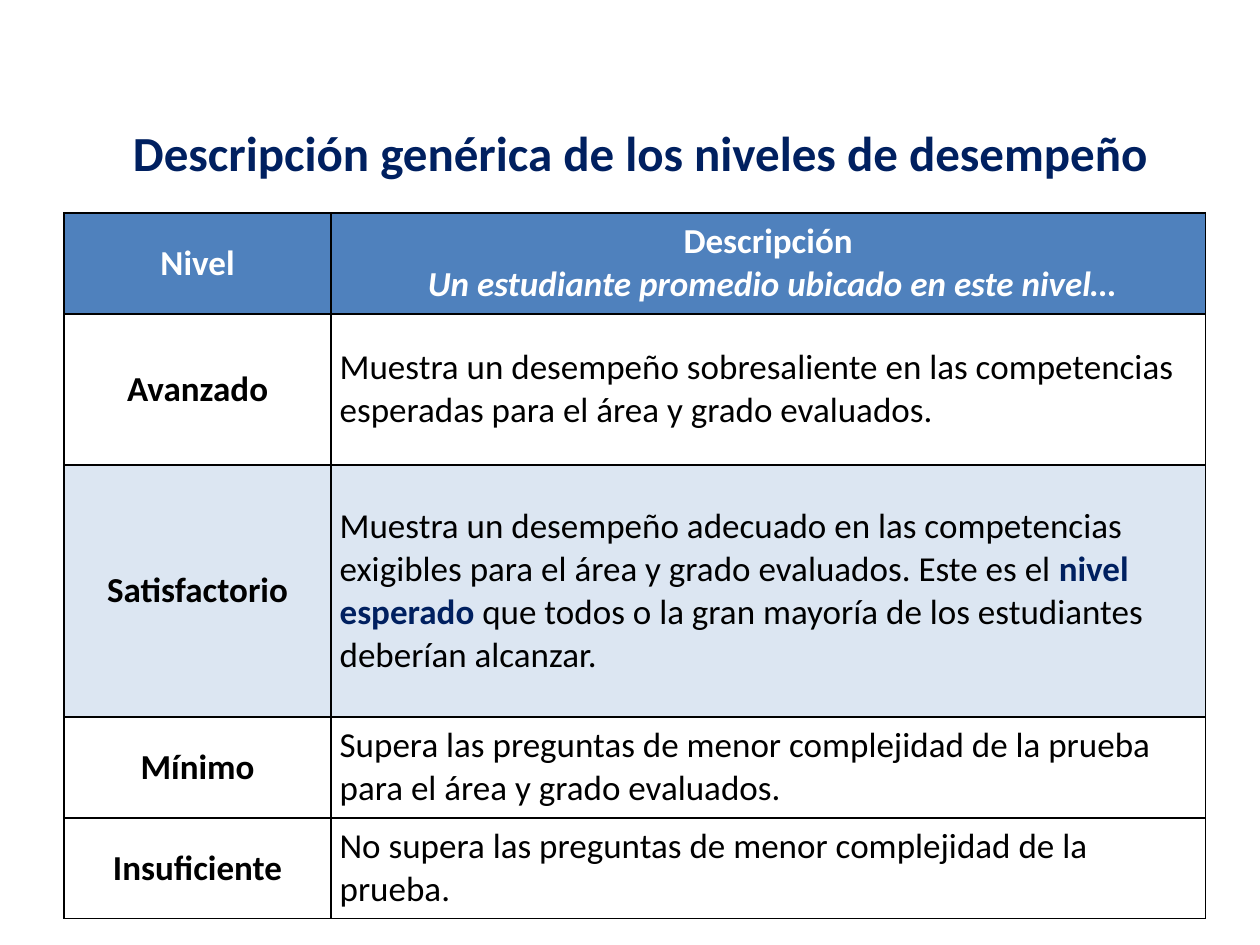
from dataclasses import dataclass

from lxml.etree import SubElement
from pptx import Presentation
from pptx.dml.color import RGBColor
from pptx.enum.text import MSO_ANCHOR as Anchor, PP_ALIGN as Align
from pptx.oxml.ns import qn
from pptx.util import Pt

FONT = "Calibri"
NAVY, BLUE, PALE = "002060", "4F81BD", "DCE6F2"
WHITE, BLACK = "FFFFFF", "000000"


@dataclass(frozen=True)
class Span:
    text: str
    bold: bool = False
    italic: bool = False
    color: str | None = None


@dataclass(frozen=True)
class Level:
    height: float
    fill: str
    name: str
    description: list[list[Span]]  # paragraphs of spans
    color: str = BLACK
    align: Align = Align.LEFT


LEVELS = [
    Level(57.6, BLUE, "Nivel", [
        [Span("Descripción", bold=True)],
        [Span(" ", bold=True),
         Span("Un estudiante promedio ubicado en este nivel…", bold=True, italic=True)],
    ], WHITE, Align.CENTER),
    Level(86.4, WHITE, "Avanzado", [[Span(
        "Muestra un desempeño sobresaliente en las competencias "
        "esperadas para el área y grado evaluados.")]]),
    Level(144, PALE, "Satisfactorio", [[
        Span("Muestra un desempeño adecuado en las competencias exigibles "
             "para el área y grado evaluados. Este es el "),
        Span("nivel esperado", bold=True, color=NAVY),
        Span(" que todos o la gran mayoría de los estudiantes deberían alcanzar."),
    ]]),
    Level(57.6, WHITE, "Mínimo", [[Span(
        "Supera las preguntas de menor complejidad de la prueba "
        "para el área y grado evaluados.")]]),
    Level(57.6, WHITE, "Insuficiente", [[Span(
        "No supera las preguntas de menor complejidad de la prueba.")]]),
]
COLUMN_WIDTHS = (152.4, 499.7)


def rgb(value: str) -> RGBColor:
    return RGBColor.from_string(value)


def set_font(font, size: float, color: str) -> None:
    font.name = FONT
    font.size = Pt(size)
    font.color.rgb = rgb(color)


def add_borders(cell) -> None:
    properties = cell._tc.get_or_add_tcPr()
    for side in ("lnL", "lnR", "lnT", "lnB"):
        line = SubElement(properties, qn(f"a:{side}"), w=str(Pt(1)))
        solid = SubElement(line, qn("a:solidFill"))
        SubElement(solid, qn("a:srgbClr"), val=BLACK)


def fill_cell(cell, paragraphs: list[list[Span]], level: Level, align: Align) -> None:
    add_borders(cell)
    cell.fill.solid()
    cell.fill.fore_color.rgb = rgb(level.fill)
    cell.vertical_anchor = Anchor.MIDDLE
    cell.margin_left = cell.margin_right = Pt(5)
    cell.margin_top = cell.margin_bottom = Pt(0)
    frame = cell.text_frame
    for index, spans in enumerate(paragraphs):
        paragraph = frame.add_paragraph() if index else frame.paragraphs[0]
        paragraph.alignment = align
        set_font(paragraph.font, 20, level.color)
        for span in spans:
            run = paragraph.add_run()
            run.text = span.text
            run.font.bold = span.bold
            run.font.italic = span.italic
            if span.color:
                run.font.color.rgb = rgb(span.color)


def add_title(slide) -> None:
    title = slide.shapes.title
    title.left, title.top, title.width, title.height = Pt(65.5), Pt(66.2), Pt(600.5), Pt(41)
    frame = title.text_frame
    frame.text = "Descripción genérica de los niveles de desempeño"
    frame.word_wrap = False
    frame.vertical_anchor = Anchor.TOP
    heading = frame.paragraphs[0]
    heading.alignment = Align.CENTER
    set_font(heading.font, 28, NAVY)
    heading.font.bold = True


def add_levels_table(slide) -> None:
    table = slide.shapes.add_table(
        len(LEVELS), len(COLUMN_WIDTHS), Pt(36.7), Pt(121.7),
        Pt(sum(COLUMN_WIDTHS)), Pt(sum(level.height for level in LEVELS))).table
    table.horz_banding = False
    for column, width in zip(table.columns, COLUMN_WIDTHS):
        column.width = Pt(width)
    for row, level in zip(table.rows, LEVELS):
        row.height = Pt(level.height)
        name_cell, description_cell = row.cells
        fill_cell(name_cell, [[Span(level.name, bold=True)]], level, Align.CENTER)
        fill_cell(description_cell, level.description, level, level.align)


def main() -> None:
    deck = Presentation()
    deck.slide_width, deck.slide_height = Pt(720), Pt(540)
    slide = deck.slides.add_slide(deck.slide_layouts[5])  # title only
    add_title(slide)
    add_levels_table(slide)
    deck.save("out.pptx")


if __name__ == "__main__":
    main()
